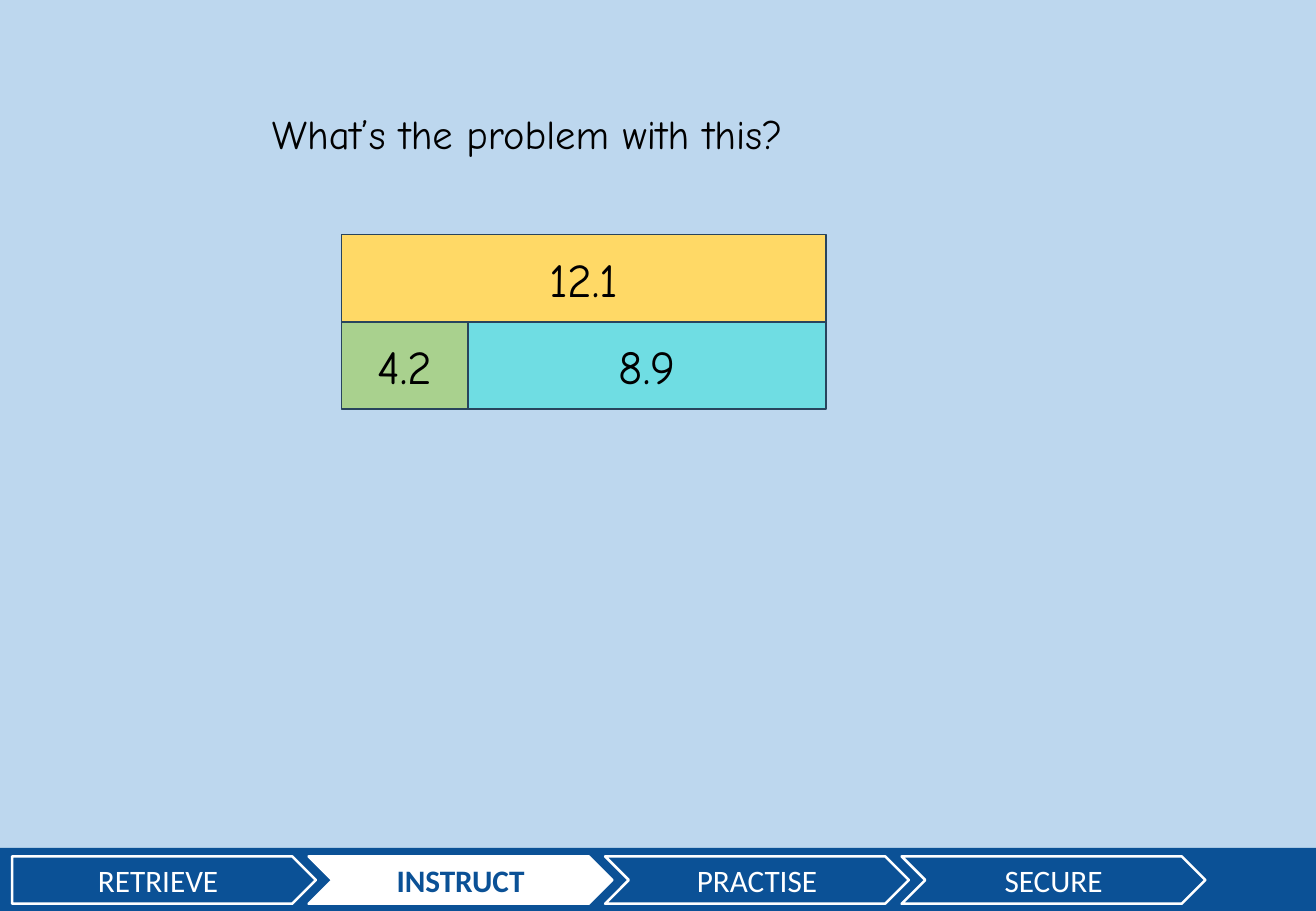
import pptx
import pptx.dml.color
import pptx.enum.shapes
import pptx.enum.text
import pptx.util

Inches = pptx.util.Inches
Color = pptx.dml.color.RGBColor
Shape = pptx.enum.shapes.MSO_SHAPE

SKY = Color(0xBD, 0xD7, 0xEE)
BLUE = Color(0x0B, 0x51, 0x96)
WHITE = Color(0xFF, 0xFF, 0xFF)
BLACK = Color(0, 0, 0)
GOLD = Color(0xFF, 0xD9, 0x66)
GREEN = Color(0xA9, 0xD1, 0x8E)
AQUA = Color(0x6F, 0xDD, 0xE3)
NAVY = Color(0x28, 0x44, 0x5D)


def style(para, text, face, size, color):
    para.text = text
    para.font.name = face
    para.font.size = pptx.util.Pt(size)
    para.font.color.rgb = color


def add_block(kind, box, fill, line=None, width=1):
    """Add a filled shape and return its centred paragraph."""
    shape = slide.shapes.add_shape(kind, *map(Inches, box))
    shape.shadow.inherit = False
    shape.fill.solid()
    shape.fill.fore_color.rgb = fill
    if line is None:
        shape.line.fill.background()
    else:
        shape.line.color.rgb = line
        shape.line.width = pptx.util.Pt(width)
    shape.text_frame.vertical_anchor = pptx.enum.text.MSO_ANCHOR.MIDDLE
    para = shape.text_frame.paragraphs[0]
    para.alignment = pptx.enum.text.PP_ALIGN.CENTER
    return para


deck = pptx.Presentation()
deck.slide_width = Inches(10.83)
deck.slide_height = Inches(7.5)
slide = deck.slides.add_slide(deck.slide_layouts[6])
slide.background.fill.solid()
slide.background.fill.fore_color.rgb = SKY

# Lesson stages along the foot
add_block(Shape.RECTANGLE, (0, 6.98, 10.83, 0.52), BLUE)
for i, stage in enumerate(["RETRIEVE", "INSTRUCT", "PRACTISE", "SECURE"]):
    active = stage == "INSTRUCT"
    kind = Shape.CHEVRON if i else Shape.PENTAGON
    box = (0.1 + 2.44 * i, 7.05, 2.5, 0.39)
    para = add_block(kind, box, WHITE if active else BLUE, WHITE, 1.5)
    style(para, stage, "Calibri", 18.5, BLUE if active else WHITE)
    para.font.bold = active

# Bar model: the whole above its two parts
left, top, high = 2.81, 1.93, 0.72
whole, part = 3.99, 1.04
bars = [
    ("12.1", left, top, whole, GOLD),
    ("4.2", left, top + high, part, GREEN),
    ("8.9", left + part, top + high, whole - part, AQUA),
]
for text, x, y, wide, fill in bars:
    para = add_block(Shape.RECTANGLE, (x, y, wide, high), fill, NAVY)
    style(para, text, "Comic Neue", 28, BLACK)

ask = slide.shapes.add_textbox(Inches(2.14), Inches(0.85), Inches(6.47), Inches(0.5))
ask.text_frame.word_wrap = True
style(ask.text_frame.paragraphs[0], "What’s the problem with this?", "Comic Neue", 24, BLACK)

deck.save("out.pptx")
